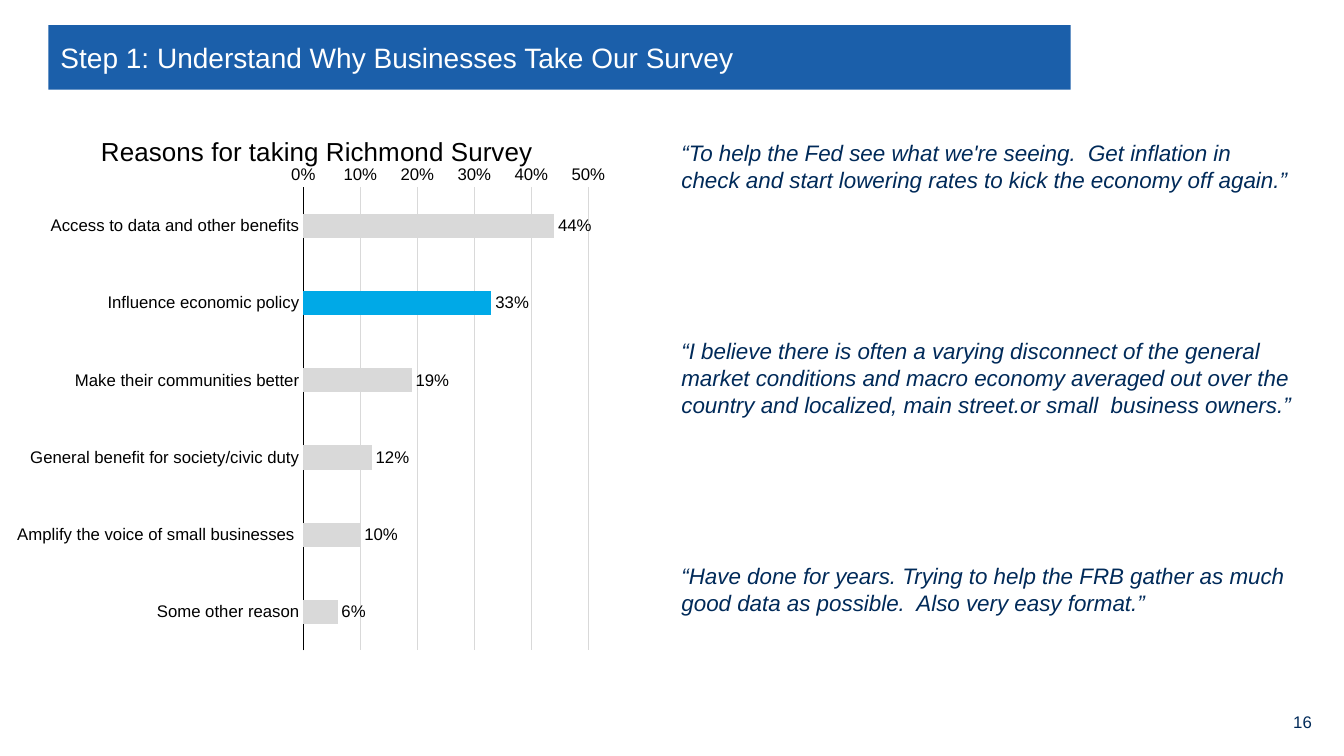
"""Build the survey reasons slide: heading bar, bar chart and three quotes."""
from dataclasses import dataclass

from lxml import etree
from pptx import Presentation
from pptx.chart.data import CategoryChartData
from pptx.dml.color import RGBColor
from pptx.enum.chart import XL_CHART_TYPE, XL_LABEL_POSITION, XL_TICK_MARK
from pptx.enum.shapes import MSO_SHAPE
from pptx.enum.text import MSO_ANCHOR, MSO_AUTO_SIZE, PP_ALIGN
from pptx.util import Inches, Pt

BAR_CHART = XL_CHART_TYPE.BAR_CLUSTERED
OUTSIDE_END = XL_LABEL_POSITION.OUTSIDE_END
NO_TICK = XL_TICK_MARK.NONE
RECT = MSO_SHAPE.RECTANGLE
TOP, MIDDLE = MSO_ANCHOR.TOP, MSO_ANCHOR.MIDDLE
NO_FIT = MSO_AUTO_SIZE.NONE
LEFT, RIGHT = PP_ALIGN.LEFT, PP_ALIGN.RIGHT

WIDTH, HEIGHT = Inches(13.33), Inches(7.5)
COLORS = {
    "bar": "1B5FAA", "white": "FFFFFF", "navy": "002A59", "black": "000000",
    "gray": "D9D9D9", "highlight": "00A9E7",
}
CHART_NS = "http://schemas.openxmlformats.org/drawingml/2006/chart"
QUOTE_LEFT = 49.96
REASONS = {
    "Access to data and other benefits": 0.44,
    "Influence economic policy": 0.33,
    "Make their communities better": 0.19,
    "General benefit for society/civic duty": 0.12,
    "Amplify the voice of small businesses ": 0.10,
    "Some other reason": 0.06,
}
HIGHLIGHTED = 1


@dataclass
class Box:
    """A rectangle in percent of the slide's width and height."""
    left: float
    top: float
    width: float
    height: float

    def emu(self) -> tuple:
        """Return left, top, width and height in slide units."""
        sides = (WIDTH, HEIGHT, WIDTH, HEIGHT)
        shares = (self.left, self.top, self.width, self.height)
        return tuple(round(side * share / 100) for side, share in zip(sides, shares))


@dataclass
class Label:
    """A piece of text with its place and look."""
    text: str
    box: Box
    size: float
    color: str = "navy"
    italic: bool = False
    anchor: MSO_ANCHOR = TOP
    align: PP_ALIGN = LEFT


BAR_BOX = Box(3.6, 3.33, 76.07, 8.53)
CHART_BOX = Box(1.28, 14.13, 44.41, 74)
TITLE = Label("Step 1: Understand Why Businesses Take Our Survey",
              Box(3.75, 3.73, 75.62, 7.73), 20, "white", anchor=MIDDLE)
LABELS = [
    Label("“To help the Fed see what we're seeing.  Get inflation in check and start "
          "lowering rates to kick the economy off again.”",
          Box(QUOTE_LEFT, 17.73, 46.89, 8.53), 16, italic=True),
    Label("“I believe there is often a varying disconnect of the general market "
          "conditions and macro economy averaged out over the country and localized, "
          "main street.or small  business owners.”",
          Box(QUOTE_LEFT, 44, 48.39, 12.13), 16, italic=True),
    Label("“Have done for years. Trying to help the FRB gather as much good data as "
          "possible.  Also very easy format.”",
          Box(QUOTE_LEFT, 73.73, 50.04, 8.53), 16, italic=True),
    Label("16", Box(93.32, 93.33, 5.03, 4.4), 12, anchor=MIDDLE, align=RIGHT),
]


def rgb(name: str) -> RGBColor:
    """Return the named colour."""
    return RGBColor.from_string(COLORS[name])


def set_font(font, size: float, color: str, **extra) -> None:
    """Apply the slide's font with the given format values."""
    values = {"name": "Arial", "size": Pt(size), "bold": False, **extra}
    for key, value in values.items():
        setattr(font, key, value)
    font.color.rgb = rgb(color)


def fill_text(s, label: Label) -> None:
    """Place a text shape and write its label."""
    s.left, s.top, s.width, s.height = label.box.emu()
    tf = s.text_frame
    values = {"word_wrap": True, "auto_size": NO_FIT, "vertical_anchor": label.anchor}
    for key, value in values.items():
        setattr(tf, key, value)
    p = tf.paragraphs[0]
    p.alignment = label.align
    r = p.add_run()
    r.text = label.text
    set_font(r.font, label.size, label.color, italic=label.italic)


def set_layout(parent, **values) -> None:
    """Give a chart part a manual layout."""
    tag = f"{{{CHART_NS}}}"
    for old in parent.findall(f"{tag}layout"):
        parent.remove(old)
    layout = etree.Element(f"{tag}layout")
    manual = etree.SubElement(layout, f"{tag}manualLayout")
    for key, value in values.items():
        etree.SubElement(manual, f"{tag}{key}").set("val", str(value))
    before = parent.find(f"{tag}tx")
    if before is None:
        parent.insert(0, layout)
    else:
        before.addnext(layout)


def add_reasons_chart(slide) -> None:
    """Draw the bar chart of reasons."""
    data = CategoryChartData(number_format="0%")
    data.categories = list(REASONS)
    data.add_series("Series 1", list(REASONS.values()))
    chart = slide.shapes.add_chart(BAR_CHART, *CHART_BOX.emu(), data).chart
    set_font(chart.font, 10, "navy")
    chart.has_legend = False
    title = chart.chart_title
    p = title.text_frame.paragraphs[0]
    r = p.add_run()
    r.text = "Reasons for taking Richmond Survey"
    set_font(r.font, 18.6, "black")
    set_layout(title._element, xMode="edge", yMode="edge", x=0.13, y=0.04)

    for axis in (chart.category_axis, chart.value_axis):
        axis.major_tick_mark = axis.minor_tick_mark = NO_TICK
        set_font(axis.tick_labels.font, 12, "black")
    reasons, shares = chart.category_axis, chart.value_axis
    reasons.reverse_order = True
    reasons.format.line.color.rgb = rgb("black")
    reasons.format.line.width = Pt(0.75)
    shares.minimum_scale, shares.maximum_scale, shares.major_unit = 0, 0.5, 0.1
    shares.tick_labels.number_format = "0%"
    shares.tick_labels.number_format_is_linked = False
    shares.format.line.fill.background()
    shares.major_gridlines.format.line.color.rgb = rgb("gray")
    shares.major_gridlines.format.line.width = Pt(0.75)

    plot = chart.plots[0]
    plot.gap_width, plot.vary_by_categories = 219, False
    series = plot.series[0]
    for part, color in ((series, "gray"), (series.points[HIGHLIGHTED], "highlight")):
        part.format.fill.solid()
        part.format.fill.fore_color.rgb = rgb(color)
    labels = series.data_labels
    values = {"show_value": True, "position": OUTSIDE_END,
              "number_format": "0%", "number_format_is_linked": False}
    for key, value in values.items():
        setattr(labels, key, value)
    set_font(labels.font, 12, "black")
    set_layout(chart._chartSpace.find(f".//{{{CHART_NS}}}plotArea"), layoutTarget="inner",
               xMode="edge", yMode="edge", x=0.478, y=0.144, w=0.479, h=0.828)


def main() -> None:
    """Build and save the slide."""
    prs = Presentation()
    prs.slide_width, prs.slide_height = WIDTH, HEIGHT
    slide = prs.slides.add_slide(prs.slide_layouts[5])
    bar = slide.shapes.add_shape(RECT, *BAR_BOX.emu())
    bar.shadow.inherit = False
    bar.fill.solid()
    bar.fill.fore_color.rgb = rgb("bar")
    bar.line.fill.background()
    title = slide.shapes.title
    bar._element.addnext(title._element)
    fill_text(title, TITLE)
    add_reasons_chart(slide)
    for label in LABELS:
        fill_text(slide.shapes.add_textbox(*label.box.emu()), label)
    prs.save("out.pptx")


if __name__ == "__main__":
    main()
